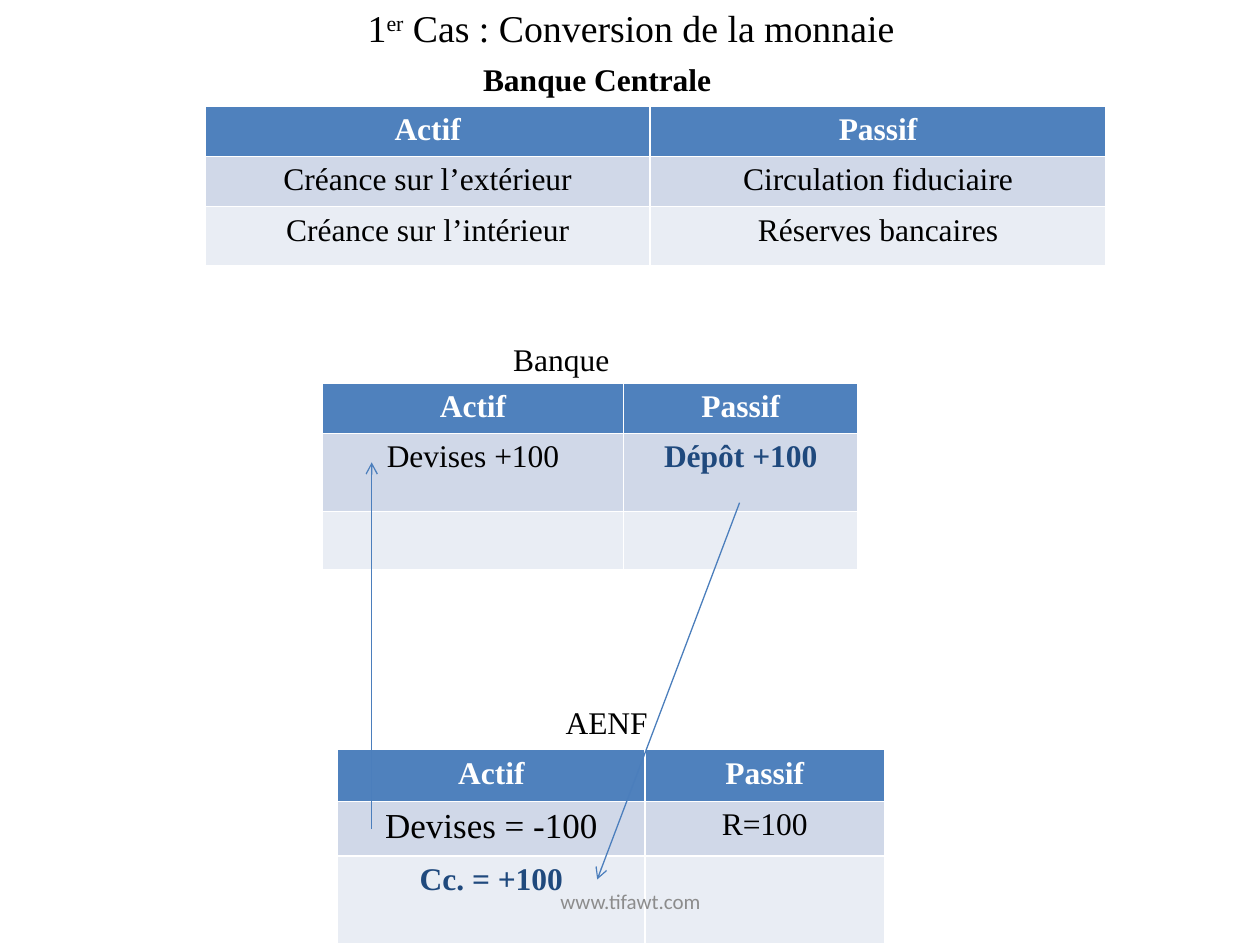
from dataclasses import dataclass

from lxml.etree import SubElement
from pptx import Presentation
from pptx.dml.color import RGBColor
from pptx.enum.shapes import MSO_CONNECTOR
from pptx.enum.text import MSO_ANCHOR, PP_ALIGN
from pptx.oxml.ns import qn
from pptx.util import Inches, Pt


@dataclass(frozen=True)
class Theme:
    serif: str = "Times New Roman"
    sans: str = "Calibri"
    title: float = 21.6
    large: float = 20
    body: float = 18
    small: float = 12
    black: str = "000000"
    white: str = "FFFFFF"
    accent: str = "1F497D"
    header: str = "4F81BD"
    bands: tuple = ("D0D8E8", "E9EDF4")
    arrow: str = "4B7EBC"
    footer: str = "8C8C8C"


T = Theme()

# Content: boxes are left, top, width, height in inches
TITLE = ("1", "er", " Cas : Conversion de la monnaie")
TITLE_BOX = (0.51, 0, 9, 0.44)
HEADER = ("Actif", "Passif")
BALANCES = [
    dict(name="Banque Centrale", bold=True, label=(3.62, 0.43, 2.24, 0.4),
         at=(1.63, 0.84), cols=(3.53, 3.62), heights=(0.4, 0.4, 0.47),
         rows=[("Créance sur l’extérieur", "Circulation fiduciaire"),
               ("Créance sur l’intérieur", "Réserves bancaires")]),
    dict(name="Banque", bold=False, label=(3.63, 2.65, 1.65, 0.4),
         at=(2.56, 3.04), cols=(2.39, 1.86), heights=(0.4, 0.62, 0.46),
         rows=[("Devises +100", "Dépôt +100"), ("", "")]),
    dict(name="AENF", bold=False, label=(4.36, 5.53, 0.91, 0.4),
         at=(2.68, 5.95), cols=(2.44, 1.9), heights=(0.41, 0.43, 0.7),
         rows=[("Devises = -100", "R=100"), ("Cc. = +100", "")]),
]
HIGHLIGHTED = {"Dépôt +100", "Cc. = +100"}
ENLARGED = {"Devises = -100"}
ARROWS = [((2.95, 6.58), (2.95, 3.67)), ((5.87, 3.99), (4.74, 6.98))]
FOOTER = "www.tifawt.com"
FOOTER_BOX = (3.42, 6.95, 3.17, 0.4)


def inches(values):
    return [Inches(v) for v in values]


def style(p, size=T.body, color=T.black, bold=False, font=T.serif):
    p.alignment = PP_ALIGN.CENTER
    for r in p.runs:
        r.font.name = font
        r.font.size = Pt(size)
        r.font.bold = bold
        r.font.color.rgb = RGBColor.from_string(color)


def add_label(s, text, box, **look):
    tf = s.shapes.add_textbox(*inches(box)).text_frame
    tf.word_wrap = True
    tf.text = text
    style(tf.paragraphs[0], **look)
    return tf


def fill_cell(cell, text, fill, **look):
    cell.fill.solid()
    cell.fill.fore_color.rgb = RGBColor.from_string(fill)
    cell.text = text
    style(cell.text_frame.paragraphs[0], **look)


def add_balance(s, balance):
    cols, heights = balance["cols"], balance["heights"]
    box = inches((*balance["at"], sum(cols), sum(heights)))
    table = s.shapes.add_table(len(heights), len(cols), *box).table
    for column, width in zip(table.columns, cols):
        column.width = Inches(width)
    for row, height in zip(table.rows, heights):
        row.height = Inches(height)
    for j, text in enumerate(HEADER):
        fill_cell(table.cell(0, j), text, T.header, color=T.white, bold=True)
    for i, row in enumerate(balance["rows"]):
        for j, text in enumerate(row):
            marked = text in HIGHLIGHTED
            fill_cell(table.cell(i + 1, j), text, T.bands[i % 2],
                      size=T.large if text in ENLARGED else T.body,
                      color=T.accent if marked else T.black, bold=marked)
    add_label(s, balance["name"], balance["label"], bold=balance["bold"])


def add_arrow(s, start, end):
    line = s.shapes.add_connector(MSO_CONNECTOR.STRAIGHT, *inches(start + end))
    line.line.width = Pt(0.75)
    line.line.color.rgb = RGBColor.from_string(T.arrow)
    SubElement(line.line._get_or_add_ln(), qn("a:tailEnd"), type="arrow")
    SubElement(line._element.spPr, qn("a:effectLst"))


def main():
    prs = Presentation()
    prs.slide_width, prs.slide_height = Inches(10), Inches(7.5)
    s = prs.slides.add_slide(prs.slide_layouts[5])

    # Title with a raised ordinal
    title = s.shapes.title
    title.left, title.top, title.width, title.height = inches(TITLE_BOX)
    title.text_frame.vertical_anchor = MSO_ANCHOR.MIDDLE
    p = title.text_frame.paragraphs[0]
    for part in TITLE:
        p.add_run().text = part
    style(p, size=T.title)
    p.runs[1].font._element.set("baseline", "30000")

    # Balance sheets, then the flows between them
    for balance in BALANCES:
        add_balance(s, balance)
    for start, end in ARROWS:
        add_arrow(s, start, end)

    # Footer
    tf = add_label(s, FOOTER, FOOTER_BOX, size=T.small, color=T.footer, font=T.sans)
    tf.vertical_anchor = MSO_ANCHOR.MIDDLE

    prs.save("out.pptx")


if __name__ == "__main__":
    main()
